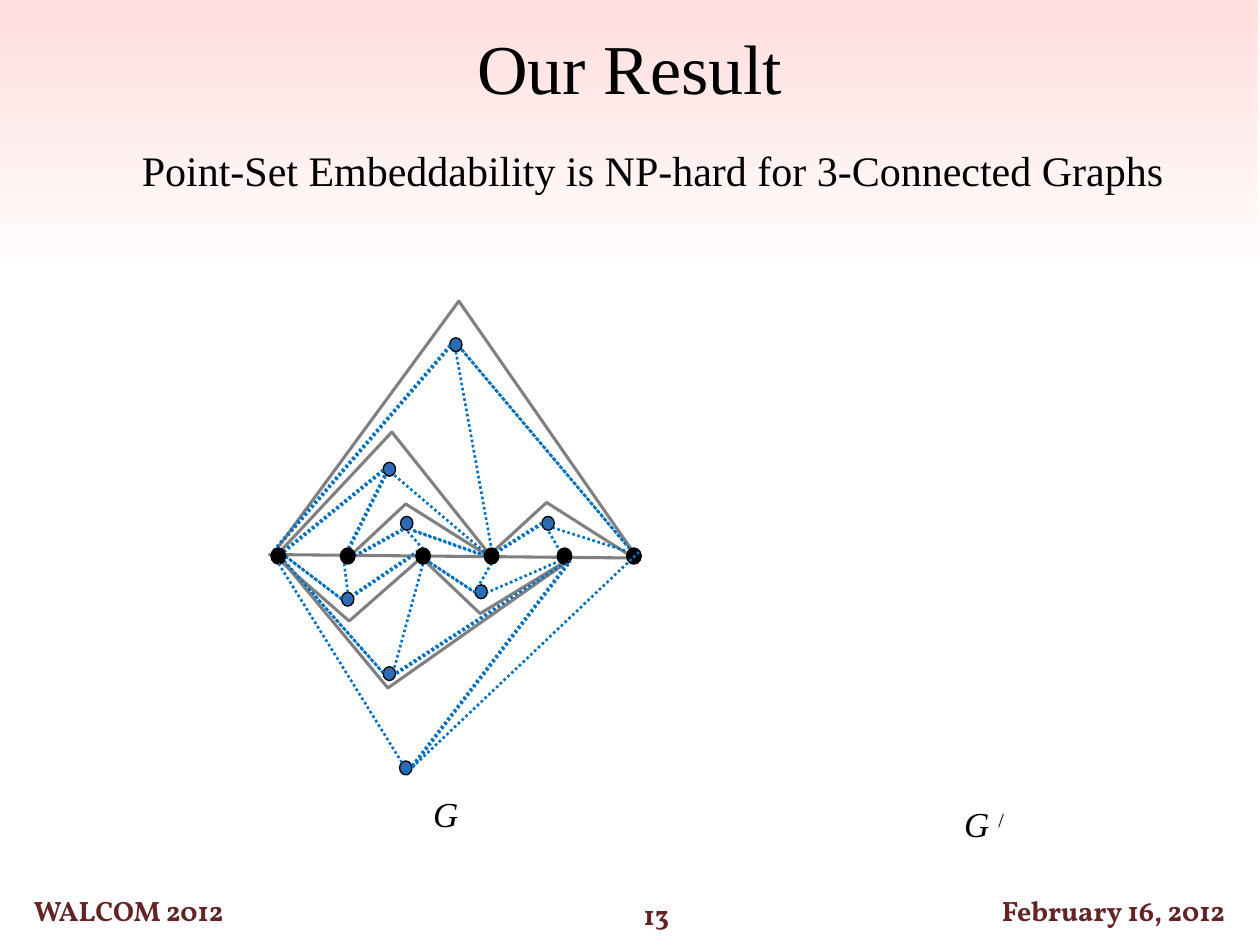
import pptx
import pptx.dml.color
import pptx.enum.dml
import pptx.enum.shapes
import pptx.enum.text
import pptx.oxml
import pptx.oxml.ns
import pptx.util
from pptx.util import Cm

RGBColor = pptx.dml.color.RGBColor
BLACK = RGBColor(0x00, 0x00, 0x00)
MAROON = RGBColor(0x63, 0x25, 0x23)
VERTEX_BLUE = RGBColor(0x2D, 0x6B, 0xB5)
EDGE_BLUE = RGBColor(0x00, 0x70, 0xC0)
GRAY = RGBColor(0x80, 0x80, 0x80)

SERIF = "Times New Roman"
FOOTER_FONT = "Vollkorn"
SHAPE = pptx.enum.shapes.MSO_SHAPE
ANCHOR = pptx.enum.text.MSO_ANCHOR

# All coordinates are centimetres.
AXIS_Y = 11.21
AXIS_XS = (5.61, 7.01, 8.53, 9.91, 11.38, 12.78)
ADDED_VERTICES = (
    (9.19, 6.95), (7.85, 9.46), (8.2, 10.55), (11.05, 10.55),
    (7.01, 12.08), (7.85, 13.58), (9.7, 11.93),
)
BOTTOM_VERTEX = (8.18, 15.48)

GRAPH_PATHS = (
    ((5.56, 11.23), (7.04, 12.52), (8.51, 11.23)),
    ((5.59, 11.18), (7.82, 13.87), (11.43, 11.33)),
    ((8.43, 11.18), (9.68, 12.37), (11.38, 11.33)),
    ((5.59, 11.18), (7.9, 8.71), (9.91, 11.23)),
    ((6.96, 11.3), (8.18, 10.16), (9.91, 11.25)),
    ((9.8, 11.25), (11.02, 10.13), (12.75, 11.23)),
    ((5.41, 11.18), (12.85, 11.25), (9.25, 6.07), (5.56, 11.1)),
)
# Double edges are drawn twice, slightly apart.
DOUBLE_EDGES = (
    (5.51, 11.1, 9.07, 6.96), (9.3, 7.04, 12.85, 11.25),
    (7.75, 9.58, 7.01, 11.07), (7.72, 9.47, 5.72, 11.1),
    (6.88, 12.07, 5.74, 11.2), (7.14, 11.2, 8.1, 10.67),
    (9.78, 11.2, 8.28, 10.67), (8.43, 11.1, 7.11, 11.99),
    (7.72, 13.56, 5.72, 11.3), (7.98, 13.56, 11.38, 11.35),
    (9.58, 11.94, 8.61, 11.3), (10.92, 10.54, 9.98, 11.13),
)
SINGLE_EDGES = (
    (9.19, 7.09, 9.91, 11.07), (7.95, 9.58, 9.91, 11.25),
    (7.01, 11.94, 6.93, 11.3), (8.53, 11.07, 8.2, 10.69),
    (7.95, 13.46, 8.53, 11.35), (11.3, 11.3, 9.83, 11.94),
    (9.91, 11.35, 9.63, 11.84), (12.7, 11.13, 11.15, 10.64),
    (11.3, 11.13, 11.05, 10.69),
)
BOTTOM_DOUBLE_EDGE = (8.18, 15.6, 11.48, 11.3)
BOTTOM_EDGES = (
    (8.1, 15.37, 5.61, 11.35), BOTTOM_DOUBLE_EDGE, (8.31, 15.47, 12.88, 11.13),
)


class GraphSlide:
    VERTEX_WIDTH, VERTEX_HEIGHT = 0.25, 0.28
    DOUBLE_SHIFT = 0.02

    def __init__(self, slide):
        self.slide = slide
        self.shapes = slide.shapes

    def set_text(self, frame, text, size, font=SERIF, color=BLACK, bold=False, italic=False):
        paragraph = frame.paragraphs[0]
        paragraph.text = text
        paragraph.alignment = pptx.enum.text.PP_ALIGN.CENTER
        paragraph.font.name = font
        paragraph.font.size = pptx.util.Pt(size)
        paragraph.font.color.rgb = color
        paragraph.font.bold = bold
        paragraph.font.italic = italic
        return paragraph

    def heading(self, left, top, width, height, text, size, wrap=True):
        frame = self.shapes.add_textbox(Cm(left), Cm(top), Cm(width), Cm(height)).text_frame
        frame.word_wrap = wrap
        self.set_text(frame, text, size)

    def preset(self, kind, left, top, width, height):
        """Add a preset shape with no fill, line or shadow."""
        shape = self.shapes.add_shape(kind, Cm(left), Cm(top), Cm(width), Cm(height))
        shape.shadow.inherit = False
        shape.fill.background()
        shape.line.fill.background()
        shape.text_frame.vertical_anchor = ANCHOR.MIDDLE
        return shape

    def top_glow(self):
        """Fade red into the white background from the top edge."""
        glow = self.preset(SHAPE.RECTANGLE, -0.02, 0, 25.4, 17.8)
        glow.fill.gradient()
        glow.fill.gradient_angle = 90
        stops = glow.element.spPr.find(".//" + pptx.oxml.ns.qn("a:gsLst"))
        for stop in list(stops):
            stops.remove(stop)
        for position, color, alpha in ((0, "FF0000", 0), (45, "FF0000", 0),
                                       (70, "FF0300", 0), (100, "FF0000", 13)):
            stops.append(pptx.oxml.parse_xml(
                f'<a:gs {pptx.oxml.ns.nsdecls("a")} pos="{position * 1000}">'
                f'<a:srgbClr val="{color}"><a:alpha val="{alpha * 1000}"/></a:srgbClr></a:gs>'))

    def footer(self, left, top, width, text):
        box = self.preset(SHAPE.ROUNDED_RECTANGLE, left, top, width, 0.89)
        self.set_text(box.text_frame, text, 16, FOOTER_FONT, MAROON, bold=True)

    def graph_label(self, left, top, text, superscript=""):
        label = self.preset(SHAPE.OVAL_CALLOUT, left, top, 2.44, 1.22)
        label.adjustments[0], label.adjustments[1] = 0.048, -0.506
        paragraph = self.set_text(label.text_frame, text, 20, italic=True)
        if superscript:
            mark = paragraph.add_run()
            mark.text = superscript
            mark.font.italic = False
            mark.font._element.set("baseline", "30000")

    def vertex(self, x, y, color, line_width):
        dot = self.preset(SHAPE.OVAL, x - self.VERTEX_WIDTH / 2, y - self.VERTEX_HEIGHT / 2,
                          self.VERTEX_WIDTH, self.VERTEX_HEIGHT)
        dot.fill.solid()
        dot.fill.fore_color.rgb = color
        dot.line.color.rgb = BLACK
        dot.line.width = pptx.util.Pt(line_width)

    def edge(self, x1, y1, x2, y2, shift=0):
        line = self.shapes.add_connector(
            pptx.enum.shapes.MSO_CONNECTOR.STRAIGHT,
            Cm(x1 + shift), Cm(y1 + shift), Cm(x2 + shift), Cm(y2 + shift))
        line.line.color.rgb = EDGE_BLUE
        line.line.width = pptx.util.Pt(1.5)
        line.line.dash_style = pptx.enum.dml.MSO_LINE.ROUND_DOT
        line._element.spPr.append(
            pptx.oxml.parse_xml(f'<a:effectLst {pptx.oxml.ns.nsdecls("a")}/>'))

    def graph_path(self, points):
        start, *others = [(Cm(x), Cm(y)) for x, y in points]
        builder = self.shapes.build_freeform(*start)
        builder.add_line_segments(others, close=False)
        outline = builder.convert_to_shape()
        outline.shadow.inherit = False
        outline.fill.background()
        outline.line.color.rgb = GRAY
        outline.line.width = pptx.util.Pt(1.75)


def main():
    deck = pptx.Presentation()
    deck.slide_width, deck.slide_height = Cm(25.4), Cm(19.05)
    page = GraphSlide(deck.slides.add_slide(deck.slide_layouts[6]))

    page.top_glow()
    page.footer(-0.02, 17.91, 5.23, "WALCOM 2012")
    page.footer(19.53, 17.91, 5.84, "February 16, 2012")
    page.footer(10.62, 17.98, 5.23, "13")
    page.heading(0, 0.38, 25.4, 1.96, "Our Result", 40)
    page.heading(2.51, 2.79, 21.51, 1.27,
                 "Point-Set Embeddability is NP-hard for 3-Connected Graphs ", 24, wrap=False)

    for ends in (*DOUBLE_EDGES, BOTTOM_DOUBLE_EDGE):
        page.edge(*ends, shift=page.DOUBLE_SHIFT)
    for points in GRAPH_PATHS:
        page.graph_path(points)
    for center in ADDED_VERTICES:
        page.vertex(*center, VERTEX_BLUE, 0.75)
    for ends in DOUBLE_EDGES + SINGLE_EDGES:
        page.edge(*ends)
    for x in AXIS_XS:
        page.vertex(x, AXIS_Y, BLACK, 2)
    page.vertex(*BOTTOM_VERTEX, VERTEX_BLUE, 0.75)
    for ends in BOTTOM_EDGES:
        page.edge(*ends)

    page.graph_label(18.62, 16, "G ", "/")
    page.graph_label(7.77, 15.8, "G")
    deck.save("out.pptx")


if __name__ == "__main__":
    main()
